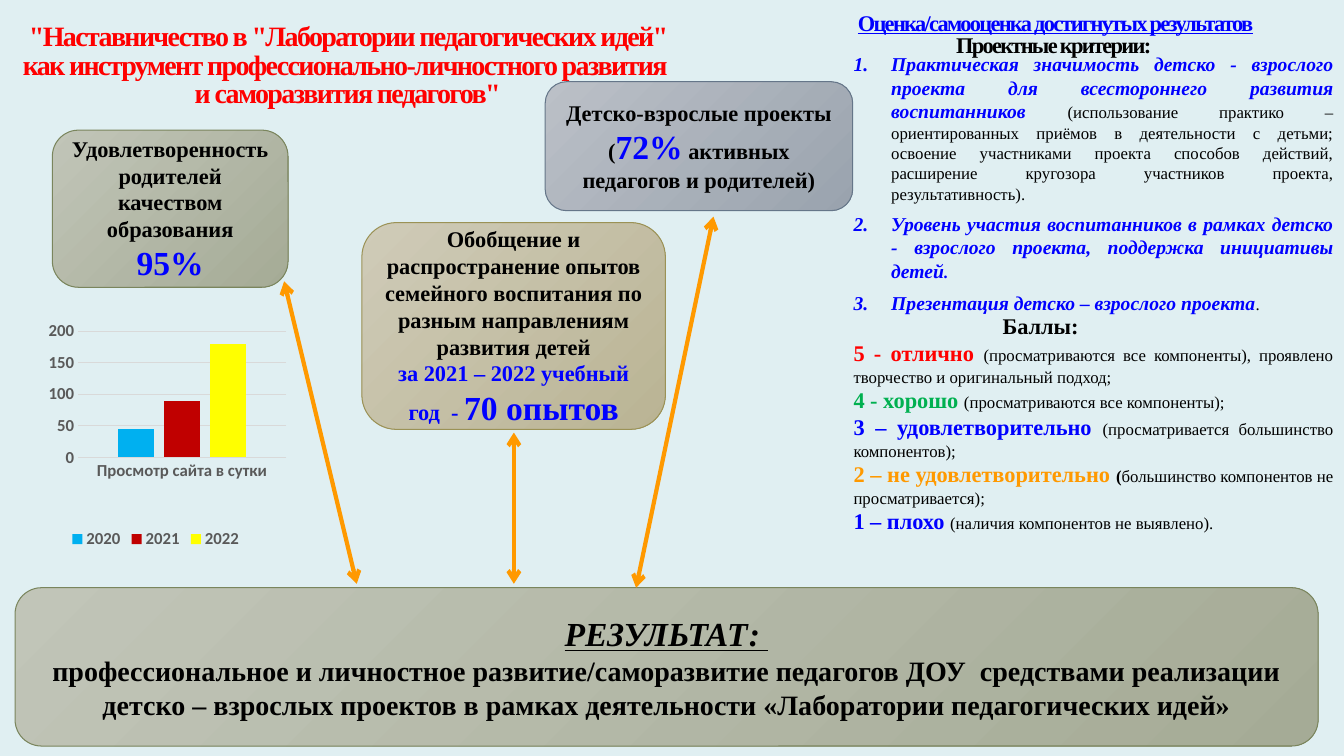
from lxml.etree import SubElement
from pptx import Presentation
from pptx.chart.data import CategoryChartData
from pptx.dml.color import RGBColor
from pptx.enum.chart import XL_CHART_TYPE, XL_LEGEND_POSITION, XL_TICK_MARK
from pptx.enum.shapes import MSO_CONNECTOR, MSO_SHAPE
from pptx.enum.text import MSO_ANCHOR, PP_ALIGN
from pptx.oxml.ns import qn
from pptx.util import Cm, Pt

BACK = RGBColor(0xE0, 0xEF, 0xF2)
BLACK = RGBColor(0, 0, 0)
RED = RGBColor(0xFF, 0, 0)
BLUE = RGBColor(0, 0, 0xFF)
GREEN = RGBColor(0, 0xB0, 0x50)
ORANGE = RGBColor(0xFF, 0x99, 0)
SKY = RGBColor(0, 0xB0, 0xF0)
WINE = RGBColor(0xC0, 0, 0)
YELLOW = RGBColor(0xFF, 0xFF, 0)
GREY = RGBColor(0x59, 0x59, 0x59)
PALE = RGBColor(0xD9, 0xD9, 0xD9)
# Light end, dark end and outline of each card colour
OLIVE = (RGBColor(0xC1, 0xC5, 0xB8), RGBColor(0xA5, 0xAB, 0x96), RGBColor(0x7A, 0x85, 0x5D))
STEEL = (RGBColor(0xBB, 0xC0, 0xC7), RGBColor(0x9A, 0xA3, 0xAE), RGBColor(0x65, 0x76, 0x89))
SAND = (RGBColor(0xCF, 0xCB, 0xB8), RGBColor(0xBA, 0xB4, 0x94), RGBColor(0x9B, 0x92, 0x56))


def write(par, text, size, color=BLACK, bold=True, italic=False, under=False, tight=False):
    run = par.add_run()
    run.text = text
    font = run.font
    font.name = "Times New Roman"
    font.size = Pt(size)
    font.color.rgb = color
    font.bold, font.italic, font.underline = bold, italic, under
    if tight:
        font._element.set("spc", "-120")


def fill_text(frame, pars, align):
    frame.word_wrap = True
    for i, runs in enumerate(pars):
        par = frame.paragraphs[0] if i == 0 else frame.add_paragraph()
        par.alignment = align
        for run in runs:
            write(par, *run)


deck = Presentation()
deck.slide_width, deck.slide_height = Cm(33.87), Cm(19.05)
slide = deck.slides.add_slide(deck.slide_layouts[5])
slide.background.fill.solid()
slide.background.fill.fore_color.rgb = BACK

# Title
title = slide.shapes.title
title.left, title.top, title.width, title.height = Cm(0.1), Cm(0.46), Cm(17.32), Cm(2.44)
title.text_frame.vertical_anchor = MSO_ANCHOR.MIDDLE
title.text_frame.word_wrap = True
par = title.text_frame.paragraphs[0]
par.alignment = PP_ALIGN.CENTER
par.line_spacing = 0.85
write(par, '"Наставничество в "Лаборатории педагогических идей" как инструмент '
      'профессионально-личностного развития ', 20, RED, tight=True)
par.add_line_break()
write(par, 'и саморазвития педагогов"', 20, RED, tight=True)

# Cards
cards = [
    ((0.38, 14.81, 32.84, 3.99), OLIVE, [
        [("РЕЗУЛЬТАТ: ", 24, BLACK, True, True, True)],
        [("профессиональное и личностное развитие/саморазвитие педагогов ДОУ  средствами "
          "реализации детско – взрослых проектов в рамках деятельности "
          "«Лаборатории педагогических идей»", 20)]]),
    ((1.32, 3.28, 5.94, 3.96), OLIVE, [
        [("Удовлетворенность родителей качеством образования", 16)],
        [("95%", 24, BLUE)]]),
    ((13.74, 2.06, 7.75, 3.25), STEEL, [
        [("Детско-взрослые проекты (", 16), ("72%", 24, BLUE), (" ", 16, BLUE),
         ("активных педагогов и родителей)", 16)]]),
    ((9.12, 5.61, 7.65, 5.21), SAND, [
        [("Обобщение и распространение опытов семейного воспитания по разным "
          "направлениям развития детей", 16)],
        [("за 2021 – 2022 учебный год  - ", 16, BLUE), ("70 опытов", 24, BLUE)]]),
]
for box, (light, dark, edge), pars in cards:
    card = slide.shapes.add_shape(MSO_SHAPE.ROUNDED_RECTANGLE, *[Cm(v) for v in box])
    card.shadow.inherit = False
    card.fill.gradient()
    card.fill.gradient_angle = 315
    for stop, color in zip(card.fill.gradient_stops, (light, dark)):
        stop.color.rgb = color
    card.line.color.rgb = edge
    card.line.width = Pt(0.75)
    card.text_frame.vertical_anchor = MSO_ANCHOR.MIDDLE
    fill_text(card.text_frame, pars, PP_ALIGN.CENTER)

# Double arrows from the cards to the result
for ends in [(7.16, 7.09, 8.99, 14.71), (12.95, 10.9, 12.95, 14.71), (17.98, 5.46, 16.03, 14.81)]:
    arrow = slide.shapes.add_connector(MSO_CONNECTOR.STRAIGHT, *[Cm(v) for v in ends])
    arrow.line.color.rgb = ORANGE
    arrow.line.width = Pt(3)
    for tag in ("a:headEnd", "a:tailEnd"):
        SubElement(arrow.line._get_or_add_ln(), qn(tag), type="arrow")
    SubElement(arrow._element.spPr, qn("a:effectLst"))

# Chart of site views
data = CategoryChartData()
data.categories = ["Просмотр сайта в сутки"]
views = [("2020", 45, SKY), ("2021", 89, WINE), ("2022", 180, YELLOW)]
for name, value, color in views:
    data.add_series(name, [value])
chart = slide.shapes.add_chart(XL_CHART_TYPE.COLUMN_CLUSTERED, Cm(0.43), Cm(8.05),
                               Cm(6.99), Cm(5.89), data).chart
chart.has_title = False
chart.has_legend = True
chart.legend.position = XL_LEGEND_POSITION.BOTTOM
chart.legend.include_in_layout = False
chart.font.name = "Calibri"
plot = chart.plots[0]
plot.gap_width, plot.overlap = 219, -27
plot.vary_by_categories = False
for bar, (name, value, color) in zip(plot.series, views):
    bar.format.fill.solid()
    bar.format.fill.fore_color.rgb = color
cat, val = chart.category_axis, chart.value_axis
for font in (cat.tick_labels.font, val.tick_labels.font, chart.legend.font):
    font.name, font.size, font.bold = "Calibri", Pt(12), True
    font.color.rgb = GREY
for axis in (cat, val):
    axis.major_tick_mark = axis.minor_tick_mark = XL_TICK_MARK.NONE
for line in (cat.format.line, val.major_gridlines.format.line):
    line.color.rgb = PALE
    line.width = Pt(0.75)
val.format.line.fill.background()
val.minimum_scale, val.maximum_scale, val.major_unit = 0, 200, 50
area = chart._chartSpace.chart.plotArea
for old in area.findall(qn("c:layout")):
    area.remove(old)
layout = area.makeelement(qn("c:layout"))
area.insert(0, layout)
manual = SubElement(layout, qn("c:manualLayout"))
for tag, value in [("layoutTarget", "inner"), ("xMode", "edge"), ("yMode", "edge"),
                   ("x", "0.22"), ("y", "0.05"), ("w", "0.75"), ("h", "0.54")]:
    SubElement(manual, qn("c:" + tag), val=value)

# Heading of the criteria
head = slide.shapes.add_textbox(Cm(19.53), Cm(0.2), Cm(14.15), Cm(1.93)).text_frame
fill_text(head, [
    [("Оценка/самооценка достигнутых результатов", 16, BLUE, True, False, True, True)],
    [("Проектные критерии: ", 16, BLACK, True, False, False, True)]], PP_ALIGN.CENTER)
for par in head.paragraphs:
    par.line_spacing = 0.85

# Numbered criteria, then marks
goals = [
    [("Практическая значимость детско - взрослого проекта для всестороннего развития "
      "воспитанников ", 14, BLUE, True, True),
     ("(использование практико – ориентированных приёмов в деятельности с детьми; освоение "
      "участниками проекта способов действий, расширение кругозора участников проекта, "
      "результативность).", 12, BLACK, False)],
    [("Уровень участия воспитанников в рамках детско - взрослого проекта, поддержка "
      "инициативы детей", 14, BLUE, True, True), (".", 12, BLUE, True, True)],
    [("Презентация детско – взрослого проекта", 14, BLUE, True, True),
     (".", 12, BLACK, False)],
]
marks = [
    [("5 - отлично ", 16, RED),
     ("(просматриваются все компоненты), проявлено творчество и оригинальный подход;",
      12, BLACK, False)],
    [("4 - хорошо ", 16, GREEN), ("(просматриваются все компоненты);", 12, BLACK, False)],
    [("3 – удовлетворительно ", 16, BLUE),
     ("(просматривается большинство компонентов);", 12, BLACK, False)],
    [("2 – не удовлетворительно ", 16, ORANGE), ("(", 12),
     ("большинство компонентов не просматривается);", 12, BLACK, False)],
    [("1 – плохо ", 16, BLUE), ("(наличия компонентов не выявлено).", 12, BLACK, False)],
]
body = slide.shapes.add_textbox(Cm(21.26), Cm(1.19), Cm(12.6), Cm(12.52)).text_frame
fill_text(body, goals + marks, PP_ALIGN.JUSTIFY)
for par in body.paragraphs[:len(goals)]:
    par.space_after = Pt(6)
    props = par._p.get_or_add_pPr()
    props.set("marL", str(Cm(0.95)))
    props.set("indent", str(-Cm(0.95)))
    SubElement(props, qn("a:buFont"), typeface="+mj-lt")
    SubElement(props, qn("a:buAutoNum"), type="arabicPeriod")
body.paragraphs[len(goals)].space_before = Pt(12)

# Heading of the marks
score = slide.shapes.add_textbox(Cm(24.43), Cm(7.75), Cm(3.73), Cm(0.94)).text_frame
fill_text(score, [[("Баллы: ", 16)]], PP_ALIGN.CENTER)

deck.save("out.pptx")
